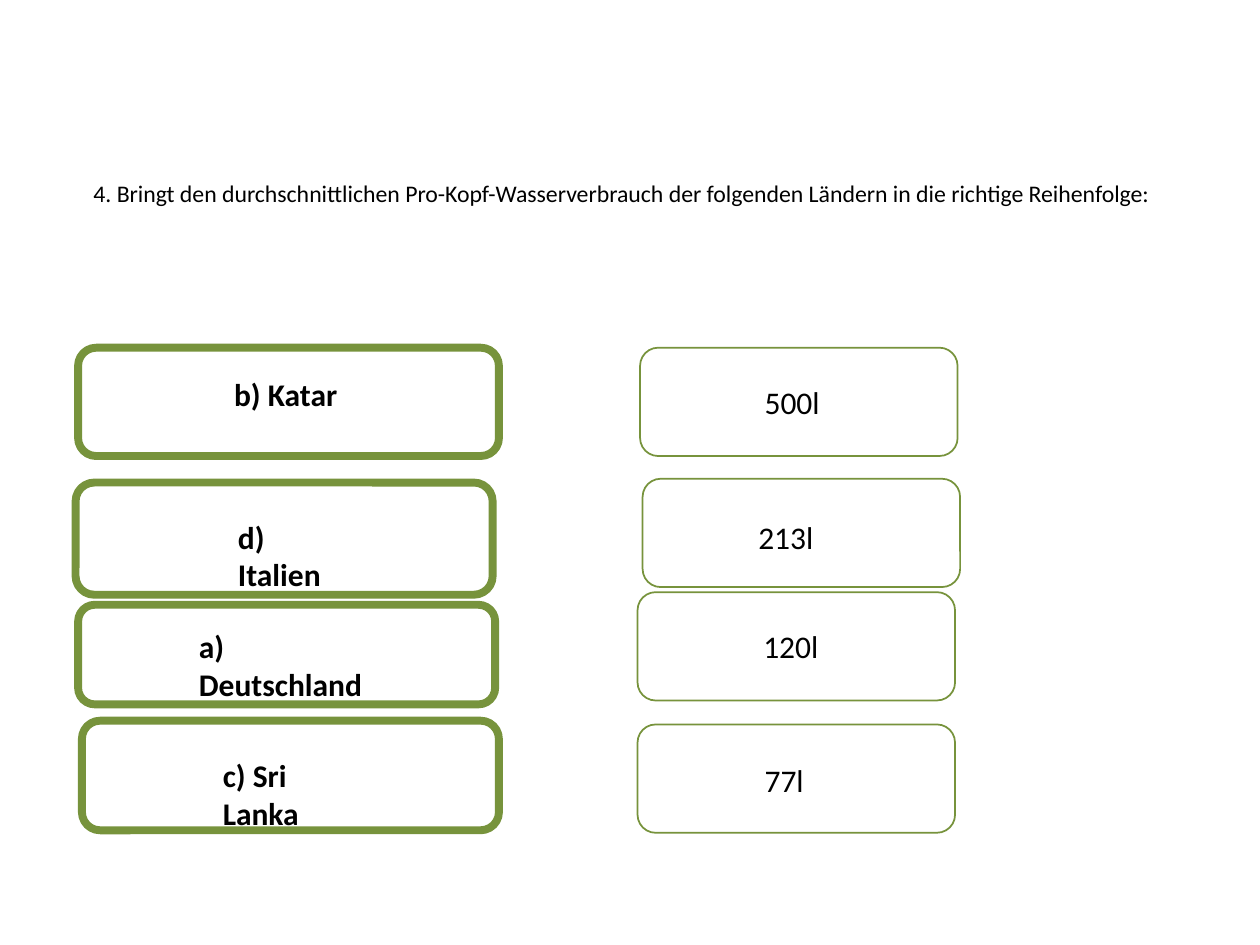
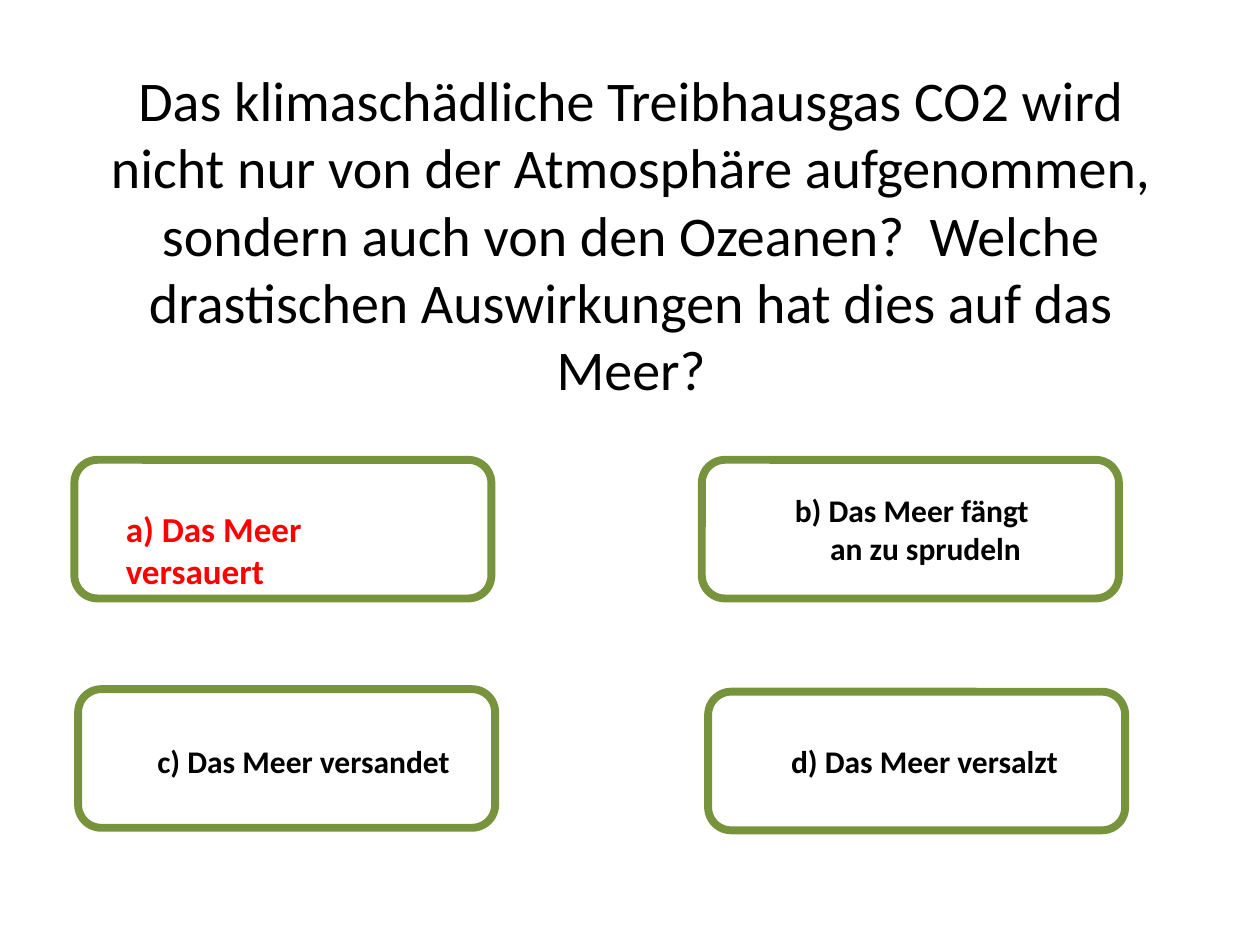
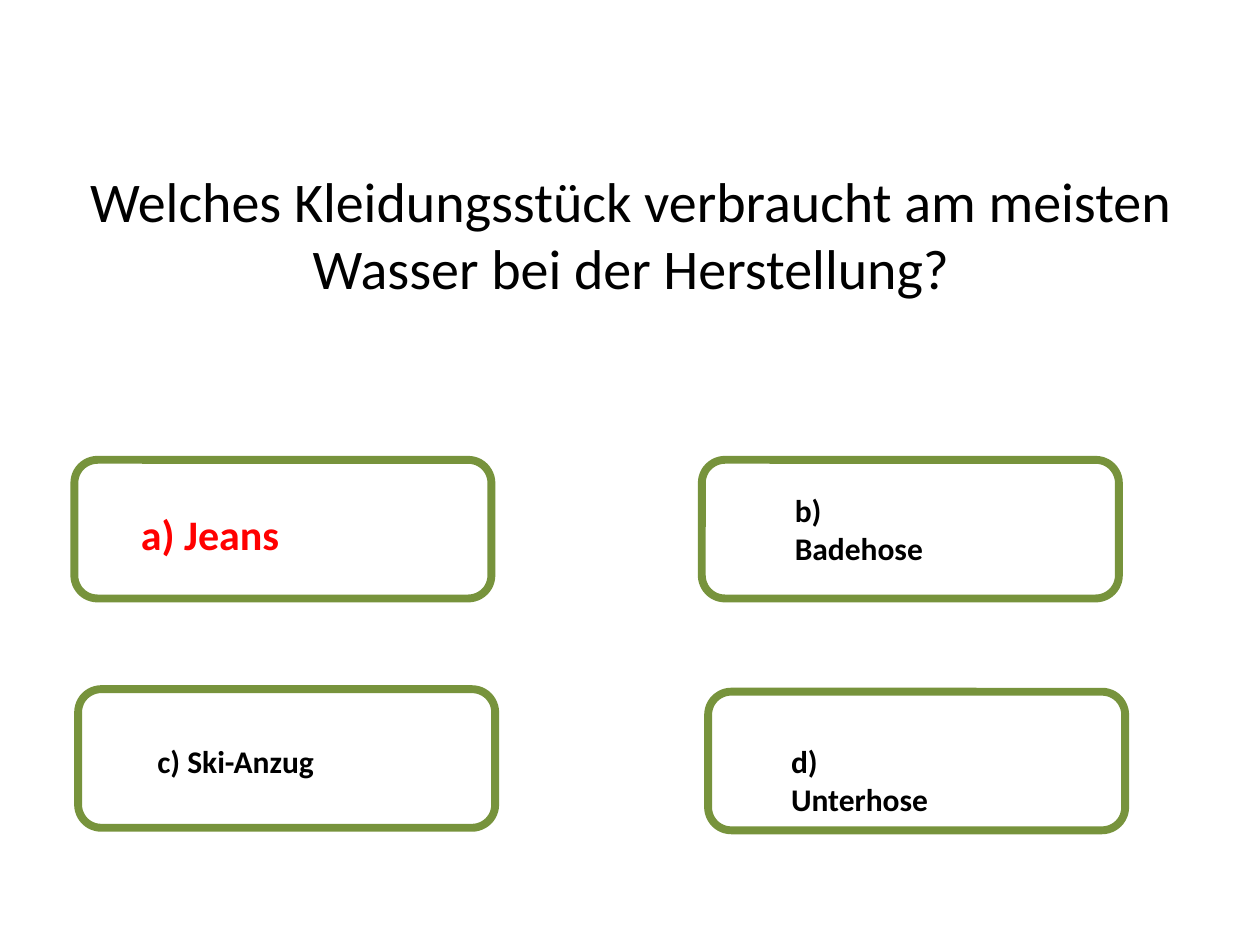
from dataclasses import dataclass

from pptx import Presentation
from pptx.dml.color import RGBColor
from pptx.enum.shapes import MSO_SHAPE
from pptx.enum.text import MSO_ANCHOR, PP_ALIGN
from pptx.util import Inches, Pt


@dataclass(frozen=True)
class Theme:
    font: str = "Calibri"
    text: RGBColor = RGBColor(0x00, 0x00, 0x00)
    solution: RGBColor = RGBColor(0xFF, 0x00, 0x00)
    frame: RGBColor = RGBColor(0x77, 0x93, 0x3C)
    thick: float = 4.5
    thin: float = 1
    question_size: float = 32
    small_question_size: float = 13.6
    answer_size: float = 18


THEME = Theme()
SLIDE_SIZE = (10, 7.5)
QUESTION_SIZE = (9, 1.25)
LINE_HEIGHT = 0.4
HANGING = 0.28

# Ranking: frame (left, top, width, height), then text, left, top, width
RANKING_QUESTION = (
    "4. Bringt den durchschnittlichen Pro-Kopf-Wasserverbrauch "
    "der folgenden Ländern in die richtige Reihenfolge:"
)
COUNTRIES = [
    ((0.62, 2.76, 3.34, 0.86), "b) Katar", 1.76, 2.93, 1.02),
    ((0.6, 3.83, 3.31, 0.89), "d) Italien", 1.79, 4.06, 1.12),
    ((0.62, 4.8, 3.31, 0.79), "a) Deutschland", 1.48, 4.93, 1.75),
    ((0.65, 5.72, 3.31, 0.87), "c) Sri Lanka", 1.67, 5.95, 1.36),
]
AMOUNT_SIZE = (2.52, 0.86)
AMOUNTS = [
    ((5.08, 2.76), "500l", 5.97, 2.99),
    ((5.1, 3.8), "213l", 5.92, 4.06),
    ((5.06, 4.7), "120l", 5.96, 4.93),
    ((5.06, 5.75), "77l", 5.97, 5.99),
]

# Multiple choice: four frames and label places, in the order a to d
CHOICE_SIZE = (3.31, 1.1)
CHOICE_FRAMES = [(0.59, 3.65), (5.57, 3.65), (0.62, 5.47), (5.62, 5.49)]
LABEL_PLACES = [(6.21, 3.85), (1.15, 5.84), (6.18, 5.84)]
CHOICE_SLIDES = [
    {
        "question": "Das klimaschädliche Treibhausgas CO2 wird nicht nur von der "
                    "Atmosphäre aufgenommen, sondern auch von den Ozeanen?  Welche "
                    "drastischen Auswirkungen hat dies auf das Meer?",
        "solution": ("a) Das Meer versauert", (0.9, 3.98, 2.5, 0.75), 20),
        "others": [
            (["b) Das Meer fängt", "an zu sprudeln"], 2.11),
            (["c) Das Meer versandet"], 2.52),
            (["d) Das Meer versalzt"], 2.32),
        ],
    },
    {
        "question": "Welches Kleidungsstück verbraucht am meisten Wasser "
                    "bei der Herstellung?",
        "solution": ("a) Jeans", (1.02, 3.99, 1.5, 0.5), 24),
        "others": [
            (["b) Badehose"], 1.48),
            (["c) Ski-Anzug"], 1.45),
            (["d) Unterhose"], 1.55),
        ],
    },
]


def add_text(page, lines, area, size=THEME.answer_size, color=THEME.text,
             bold=False, wrap=False, align=PP_ALIGN.LEFT, anchor=MSO_ANCHOR.TOP):
    """Place one paragraph per line; lines after the first are indented."""
    box = page.shapes.add_textbox(*map(Inches, area))
    frame = box.text_frame
    frame.word_wrap = wrap
    frame.vertical_anchor = anchor
    frame.text = "\n".join(lines)
    for index, para in enumerate(frame.paragraphs):
        para.alignment = align
        para.font.name = THEME.font
        para.font.size = Pt(size)
        para.font.bold = bold
        para.font.color.rgb = color
        if index:
            para._p.get_or_add_pPr().set("marL", str(Inches(HANGING)))


def add_question(page, text, left, top, size):
    add_text(page, [text], (left, top, *QUESTION_SIZE), size, wrap=True,
             align=PP_ALIGN.CENTER, anchor=MSO_ANCHOR.MIDDLE)


def add_frame(page, area, weight=THEME.thick):
    shape = page.shapes.add_shape(MSO_SHAPE.ROUNDED_RECTANGLE, *map(Inches, area))
    shape.shadow.inherit = False
    shape.fill.background()
    shape.line.color.rgb = THEME.frame
    shape.line.width = Pt(weight)


def build_ranking(page):
    add_question(page, RANKING_QUESTION, 0.43, 0.91, THEME.small_question_size)
    for area, country, left, top, width in COUNTRIES:
        add_frame(page, area)
        add_text(page, [country], (left, top, width, LINE_HEIGHT), bold=True)
    for corner, amount, left, top in AMOUNTS:
        add_frame(page, corner + AMOUNT_SIZE, THEME.thin)
        add_text(page, [amount], (left, top, 0.94, LINE_HEIGHT), wrap=True)


def build_choice(page, content):
    add_question(page, content["question"], 0.51, 1.23, THEME.question_size)
    for corner in CHOICE_FRAMES:
        add_frame(page, corner + CHOICE_SIZE)
    solution, area, size = content["solution"]
    add_text(page, [solution], area, size, THEME.solution, bold=True, wrap=True)
    for (lines, width), place in zip(content["others"], LABEL_PLACES):
        height = 0.1 + 0.3 * len(lines)
        add_text(page, lines, (*place, width, height), bold=True)


def main():
    deck = Presentation()
    deck.slide_width, deck.slide_height = map(Inches, SLIDE_SIZE)
    blank = deck.slide_layouts[6]
    build_ranking(deck.slides.add_slide(blank))
    for content in CHOICE_SLIDES:
        build_choice(deck.slides.add_slide(blank), content)
    deck.save("out.pptx")


if __name__ == "__main__":
    main()
